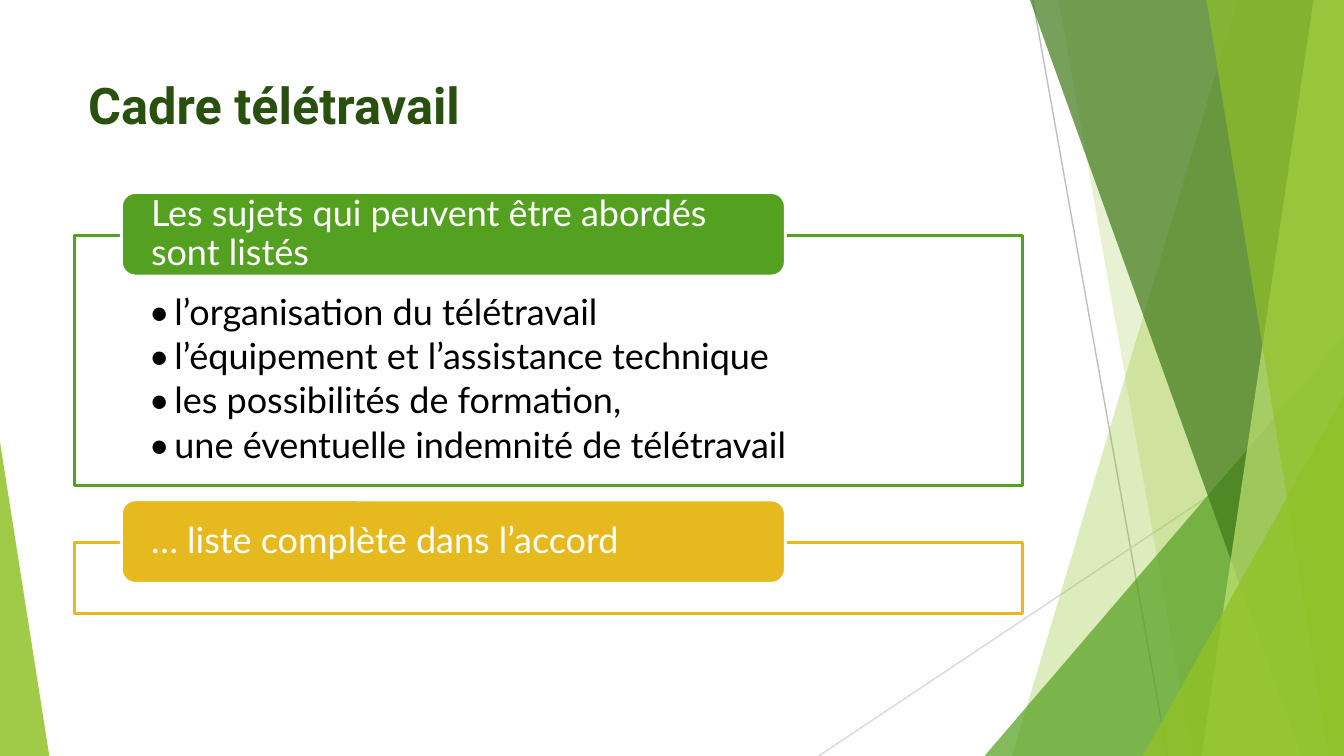
import dataclasses

import pptx
import pptx.dml.color
import pptx.enum.shapes
import pptx.enum.text
import pptx.oxml.ns
import pptx.util
from lxml import etree

PX = 6350  # EMU in one px, 144 px to the inch
WIDTH, HEIGHT = 1417, 797
SHAPES = pptx.enum.shapes.MSO_SHAPE
ANCHOR = pptx.enum.text.MSO_ANCHOR


@dataclasses.dataclass(frozen=True)
class Theme:
    lime: str = "90C226"
    pale_lime: str = "C0E474"
    green: str = "54A021"
    deep_green: str = "3F7819"
    title_green: str = "2A5010"
    gold: str = "E6B91E"
    white: str = "FFFFFF"
    black: str = "000000"
    grey: str = "BFBFBF"
    light_grey: str = "D9D9D9"
    title_font: str = "Roboto"
    body_font: str = "Lato"
    title_size: float = 26.6
    body_size: float = 19
    frame_width: float = 1.5
    hairline: float = 0.75


THEME = Theme()


def px(*lengths):
    return [pptx.util.Emu(length * PX) for length in lengths]


def rgb(colour):
    return pptx.dml.color.RGBColor.from_string(colour)


def paint(shape, colour, opacity=100, outline=None):
    """Fill a shape, in part see-through, and outline it or not."""
    shape.shadow.inherit = False
    shape.fill.solid()
    shape.fill.fore_color.rgb = rgb(colour)
    if opacity < 100:
        tag = pptx.oxml.ns.qn("a:srgbClr")
        colour_node = next(shape._element.spPr.iter(tag))
        alpha = etree.SubElement(colour_node, pptx.oxml.ns.qn("a:alpha"))
        alpha.set("val", str(opacity * 1000))
    if outline:
        shape.line.color.rgb = rgb(outline)
        shape.line.width = pptx.util.Pt(THEME.frame_width)
    else:
        shape.line.fill.background()


def set_frame(shape, insets, anchor):
    frame = shape.text_frame
    frame.word_wrap = True
    frame.vertical_anchor = anchor
    (frame.margin_left, frame.margin_top,
     frame.margin_right, frame.margin_bottom) = px(*insets)
    return frame


def style(para, font, size, colour, bold=False):
    para.alignment = pptx.enum.text.PP_ALIGN.LEFT
    para.font.name = font
    para.font.size = pptx.util.Pt(size)
    para.font.color.rgb = rgb(colour)
    para.font.bold = bold


def add_bullet(para, indent):
    properties = para._p.get_or_add_pPr()
    properties.set("marL", str(indent * PX))
    properties.set("indent", str(-indent * PX))
    typeface = etree.SubElement(properties, pptx.oxml.ns.qn("a:buFont"))
    typeface.set("typeface", THEME.body_font)
    bullet = etree.SubElement(properties, pptx.oxml.ns.qn("a:buChar"))
    bullet.set("char", "•")


def add_hairline(page, ends, colour):
    line = page.shapes.add_connector(
        pptx.enum.shapes.MSO_CONNECTOR.STRAIGHT, *px(*ends))
    line.line.color.rgb = rgb(colour)
    line.line.width = pptx.util.Pt(THEME.hairline)
    properties = line._element.spPr
    etree.SubElement(properties, pptx.oxml.ns.qn("a:effectLst"))


def add_band(page, box, top_x, bottom_x, colour, opacity):
    """A band with a slanted left edge, reaching the right of its box."""
    left, top, width, height = box
    right, bottom = left + width, top + height
    builder = page.shapes.build_freeform(left + top_x, top, scale=PX)
    builder.add_line_segments(
        [(right, top), (right, bottom), (left + bottom_x, bottom)], close=True)
    paint(builder.convert_to_shape(), colour, opacity)


def add_corner(page, box, apex, colour, opacity):
    corner = page.shapes.add_shape(SHAPES.ISOSCELES_TRIANGLE, *px(*box))
    corner.adjustments[0] = apex
    paint(corner, colour, opacity)


def draw_backdrop(page, box):
    left, top, width, height = box
    right, bottom = left + width, top + height

    def right_corner(corner_width, corner_height, colour, opacity):
        corner_box = (right - corner_width, bottom - corner_height,
                      corner_width, corner_height)
        add_corner(page, corner_box, 1, colour, opacity)

    # Thin crossing lines
    add_hairline(page, (left + 1089, top, left + 1231, bottom), THEME.grey)
    add_hairline(page, (right, top + 428, left + 863, bottom), THEME.light_grey)

    # Overlapping bands and corners on the right
    add_band(page, box, 1305, 1067, THEME.lime, 30)
    add_band(page, box, 1116, 1257, THEME.lime, 20)
    right_corner(379, 442, THEME.green, 72)
    add_band(page, box, 1086, 1372, THEME.deep_green, 70)
    add_band(page, box, 1385, 1267, THEME.pale_lime, 70)
    add_band(page, box, 1272, 1401, THEME.lime, 65)
    right_corner(212, 380, THEME.lime, 80)

    # Sliver on the left
    add_corner(page, (left, bottom - 331, 52, 331), 0, THEME.lime, 85)


def draw_title(page, box, text):
    title = page.shapes.add_textbox(*px(*box))
    para = set_frame(title, (14, 7, 14, 7), ANCHOR.TOP).paragraphs[0]
    para.text = text
    style(para, THEME.title_font, THEME.title_size, THEME.title_green, bold=True)


def draw_topic(page, box, heading, items, colour):
    """A framed list with a heading label across its top edge."""
    left, top, width, height = box

    # Frame and list
    panel = page.shapes.add_shape(SHAPES.RECTANGLE, *px(*box))
    paint(panel, THEME.white, 90, colour)
    if items:
        frame = set_frame(panel, (78, 62, 78, 22), ANCHOR.TOP)
        for index, item in enumerate(items):
            para = frame.add_paragraph() if index else frame.paragraphs[0]
            para.text = item
            add_bullet(para, 27)
            para.line_spacing = 0.9
            para.space_after = pptx.util.Pt(2.85)
            style(para, THEME.body_font, THEME.body_size, THEME.black)

    # Heading label
    label = page.shapes.add_shape(
        SHAPES.ROUNDED_RECTANGLE, *px(left + 49, top - 45, 700, 88))
    paint(label, colour, outline=THEME.white)
    para = set_frame(label, (27, 0, 27, 0), ANCHOR.MIDDLE).paragraphs[0]
    para.text = heading
    para.line_spacing = 0.9
    style(para, THEME.body_font, THEME.body_size, THEME.white)


def main():
    deck = pptx.Presentation()
    deck.slide_width, deck.slide_height = px(WIDTH, HEIGHT)
    page = deck.slides.add_slide(deck.slide_layouts[6])

    draw_backdrop(page, (0, 0, WIDTH, HEIGHT))
    draw_title(page, (79, 71, 999, 154), "Cadre télétravail")
    subjects = [
        "l’organisation du télétravail",
        "l’équipement et l’assistance technique",
        "les possibilités de formation,",
        "une éventuelle indemnité de télétravail",
    ]
    draw_topic(page, (79, 248, 999, 264),
               "Les sujets qui peuvent être abordés sont listés",
               subjects, THEME.green)
    draw_topic(page, (79, 572, 999, 75),
               "… liste complète dans l’accord", [], THEME.gold)

    deck.save("out.pptx")


if __name__ == "__main__":
    main()
